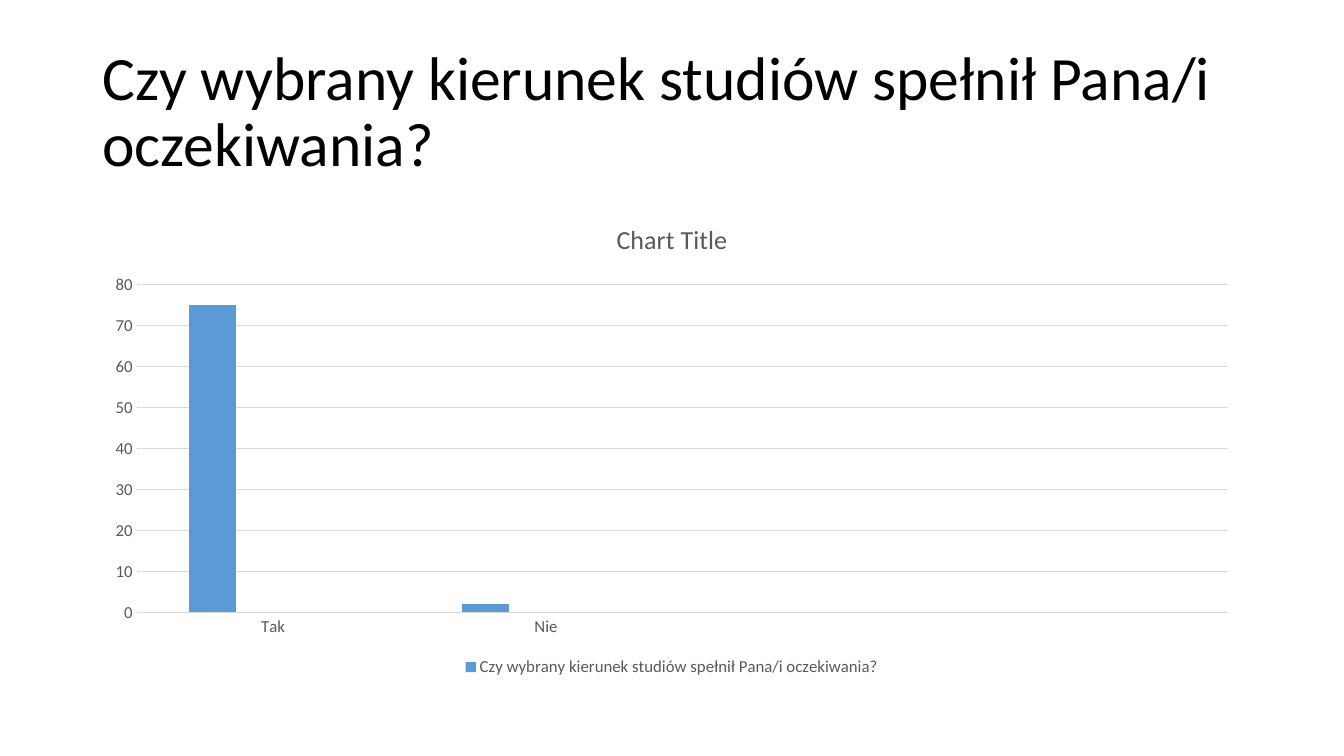
from dataclasses import dataclass
from typing import Optional

from lxml.etree import SubElement
from pptx import Presentation
from pptx.chart.data import CategoryChartData
from pptx.dml.color import RGBColor
from pptx.enum.chart import XL_CHART_TYPE, XL_LEGEND_POSITION, XL_TICK_MARK
from pptx.enum.text import MSO_ANCHOR, MSO_AUTO_SIZE, PP_ALIGN
from pptx.oxml.ns import qn
from pptx.util import Pt

FONT = "Calibri"
HUES = {
    "ink": "000000",
    "label": "595959",
    "rule": "D9D9D9",
    "blue": "5B9BD5",
    "orange": "ED7D31",
    "gray": "A5A5A5",
}
ASK = "Czy wybrany kierunek studiów spełnił Pana/i oczekiwania?"
NAMES = ["Tak", "Nie", "", ""]


@dataclass
class Group:
    name: str
    vals: list[Optional[float]]
    hue: str


GROUPS = [
    Group(ASK, [75, 2, None, None], "blue"),
    Group("Series 2", [None] * 4, "orange"),
    Group("Series 3", [None] * 4, "gray"),
]


def tint(hue: str) -> RGBColor:
    return RGBColor.from_string(HUES[hue])


def style(font, size: float, hue: str) -> None:
    font.name = FONT
    font.size = Pt(size)
    font.bold = False
    font.color.rgb = tint(hue)


def rule(line) -> None:
    line.width = Pt(0.75)
    line.color.rgb = tint("rule")


def add_title(slide) -> None:
    title = slide.shapes.title
    title.left, title.top = Pt(66), Pt(28.75)
    title.width, title.height = Pt(828), Pt(104.4)
    frame = title.text_frame
    frame.word_wrap = True
    frame.auto_size = MSO_AUTO_SIZE.NONE
    frame.vertical_anchor = MSO_ANCHOR.MIDDLE
    para = frame.paragraphs[0]
    para.alignment = PP_ALIGN.LEFT
    para.line_spacing = 0.9
    run = para.add_run()
    run.text = ASK
    style(run.font, 44, "ink")


def hide_entry(legend, index: int) -> None:
    node = legend._element
    entry = SubElement(node, qn("c:legendEntry"))
    SubElement(entry, qn("c:idx")).set("val", str(index))
    SubElement(entry, qn("c:delete")).set("val", "1")
    node.insert(index, entry)


def add_chart(slide) -> None:
    data = CategoryChartData()
    data.categories = NAMES
    for group in GROUPS:
        data.add_series(group.name, group.vals)
    chart = slide.shapes.add_chart(
        XL_CHART_TYPE.COLUMN_CLUSTERED, Pt(66), Pt(144), Pt(828), Pt(342.6), data
    ).chart
    style(chart.font, 10, "ink")

    run = chart.chart_title.text_frame.paragraphs[0].add_run()
    run.text = "Chart Title"
    style(run.font, 18.6, "label")
    chart.chart_title.include_in_layout = False

    plot = chart.plots[0]
    plot.gap_width = 219
    plot.overlap = -27
    plot.vary_by_categories = False
    for group, bars in zip(GROUPS, plot.series):
        bars.format.fill.solid()
        bars.format.fill.fore_color.rgb = tint(group.hue)
        bars.invert_if_negative = False

    base, scale = chart.category_axis, chart.value_axis
    for axis in (base, scale):
        axis.major_tick_mark = XL_TICK_MARK.NONE
        axis.minor_tick_mark = XL_TICK_MARK.NONE
        style(axis.tick_labels.font, 12, "label")
    rule(base.format.line)
    scale.format.line.fill.background()
    scale.has_major_gridlines = True
    rule(scale.major_gridlines.format.line)

    chart.has_legend = True
    legend = chart.legend
    legend.position = XL_LEGEND_POSITION.BOTTOM
    legend.include_in_layout = False
    style(legend.font, 12, "label")
    for index in range(1, len(GROUPS)):
        hide_entry(legend, index)


def main() -> None:
    deck = Presentation()
    deck.slide_width, deck.slide_height = Pt(960), Pt(540)
    slide = deck.slides.add_slide(deck.slide_layouts[5])
    add_title(slide)
    add_chart(slide)
    deck.save("out.pptx")


if __name__ == "__main__":
    main()
